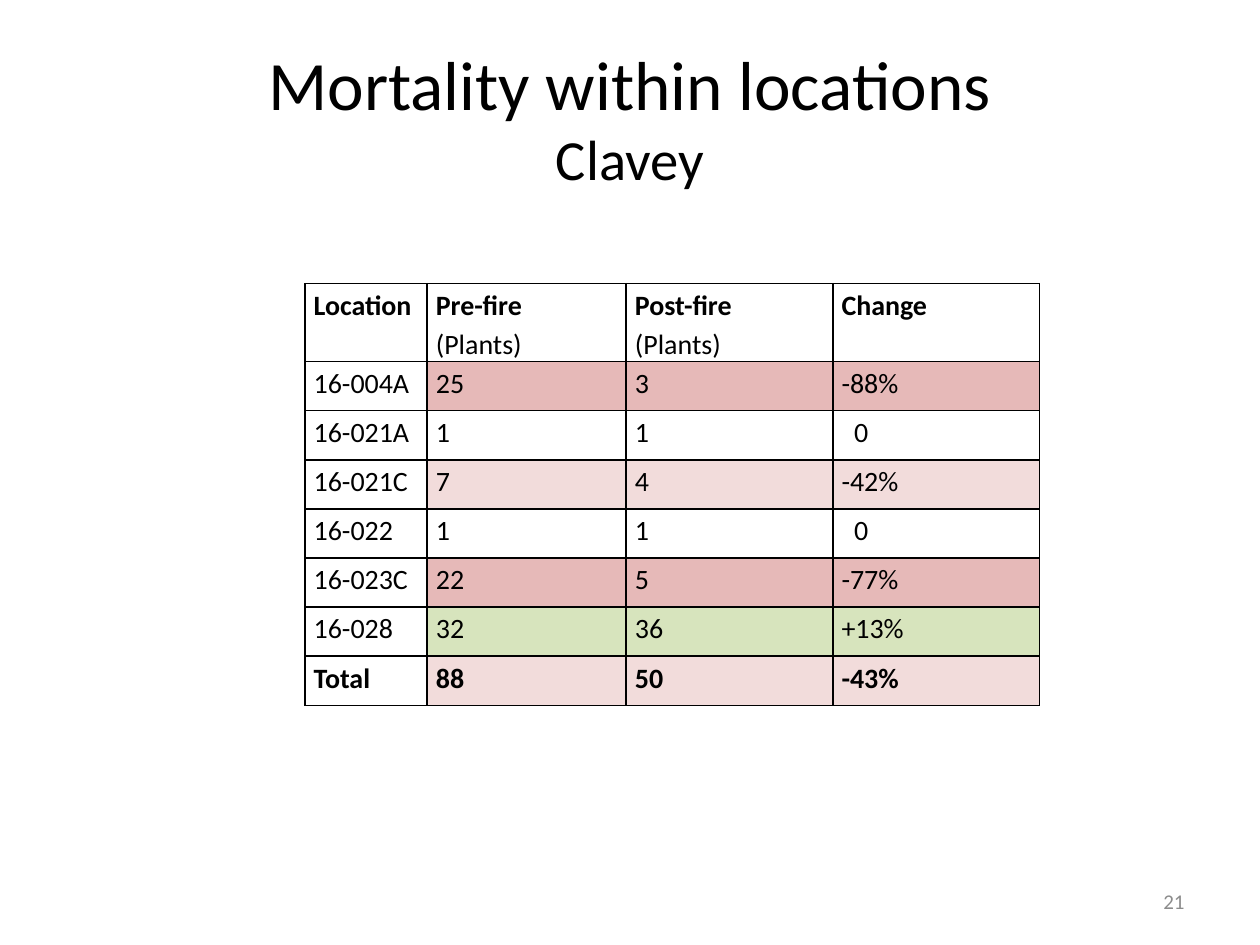
import pptx
import pptx.dml.color
import pptx.enum.text
import pptx.oxml
import pptx.oxml.ns
import pptx.util
from pptx.util import Inches

ALIGN = pptx.enum.text.PP_ALIGN
MIDDLE = pptx.enum.text.MSO_ANCHOR.MIDDLE
ROSE, BLUSH, GREEN = "E6B9B8", "F2DCDB", "D7E4BD"

HEADERS = [["Location"], ["Pre-fire", "(Plants)"], ["Post-fire", "(Plants)"], ["Change"]]
LOCATIONS = [
    (["16-004A", "25", "3", "-88%"], ROSE),
    (["16-021A", "1", "1", "0"], None),
    (["16-021C", "7", "4", "-42%"], BLUSH),
    (["16-022", "1", "1", "0"], None),
    (["16-023C", "22", "5", "-77%"], ROSE),
    (["16-028", "32", "36", "+13%"], GREEN),
    (["Total", "88", "50", "-43%"], BLUSH),
]


def colour(value):
    return pptx.dml.color.RGBColor.from_string(value)


class SlideBuilder:
    font_name = "Calibri"
    ink = "000000"

    def __init__(self, page):
        self.page = page

    def style(self, font, size, ink=None, bold=False):
        font.name = self.font_name
        font.size = pptx.util.Pt(size)
        font.bold = bold
        font.color.rgb = colour(ink or self.ink)

    def text(self, place, lines, align, ink=None):
        box = self.page.shapes.add_textbox(*map(Inches, place))
        frame = box.text_frame
        frame.word_wrap = True
        frame.vertical_anchor = MIDDLE
        para = frame.paragraphs[0]
        para.alignment = align
        for index, (words, size) in enumerate(lines):
            if index:
                para.add_line_break()
            span = para.add_run()
            span.text = words
            self.style(span.font, size, ink)

    def borders(self, cell):
        properties = cell._tc.get_or_add_tcPr()
        for side in ("lnL", "lnR", "lnT", "lnB"):
            properties.append(pptx.oxml.parse_xml(
                f'<a:{side} {pptx.oxml.ns.nsdecls("a")} w="12700"><a:solidFill>'
                f'<a:srgbClr val="{self.ink}"/></a:solidFill></a:{side}>'))

    def cell(self, cell, lines, bold_lines=0, fill=None, indent=0):
        cell.margin_left = Inches(0.07 + indent)
        cell.margin_right = Inches(0.07)
        cell.margin_top = cell.margin_bottom = 0
        self.borders(cell)
        if fill:
            cell.fill.solid()
            cell.fill.fore_color.rgb = colour(fill)
        else:
            cell.fill.background()
        cell.text_frame.text = "\n".join(lines)
        for index, para in enumerate(cell.text_frame.paragraphs):
            para.line_spacing = 1.15
            self.style(para.font, 16, bold=index < bold_lines)

    def table(self, left, top, widths, heights):
        frame = self.page.shapes.add_table(
            len(heights), len(widths), Inches(left), Inches(top),
            Inches(sum(widths)), Inches(sum(heights)))
        table = frame.table
        table.first_row = table.horz_banding = False
        for column, width in zip(table.columns, widths):
            column.width = Inches(width)
        for row, height in zip(table.rows, heights):
            row.height = Inches(height)
        return table


def main():
    deck = pptx.Presentation()
    deck.slide_width, deck.slide_height = Inches(10), Inches(7.5)
    builder = SlideBuilder(deck.slides.add_slide(deck.slide_layouts[6]))

    builder.text((0.5, 0.3, 9, 1.25),
                 [("Mortality within locations", 39.6), ("Clavey", 32.4)], ALIGN.CENTER)

    table = builder.table(2.42, 2.25, [0.97, 1.58, 1.64, 1.64],
                          [0.62] + [0.39] * len(LOCATIONS))
    for column, lines in enumerate(HEADERS):
        builder.cell(table.cell(0, column), lines, bold_lines=1)
    for row, (values, fill) in enumerate(LOCATIONS, start=1):
        for column, value in enumerate(values):
            builder.cell(table.cell(row, column), [value],
                         bold_lines=int(values[0] == "Total"),
                         fill=fill if column else None,
                         indent=0.1 if value == "0" else 0)

    builder.text((7.17, 6.95, 2.33, 0.4), [("21", 12)], ALIGN.RIGHT, "8C8C8C")
    deck.save("out.pptx")


if __name__ == "__main__":
    main()
